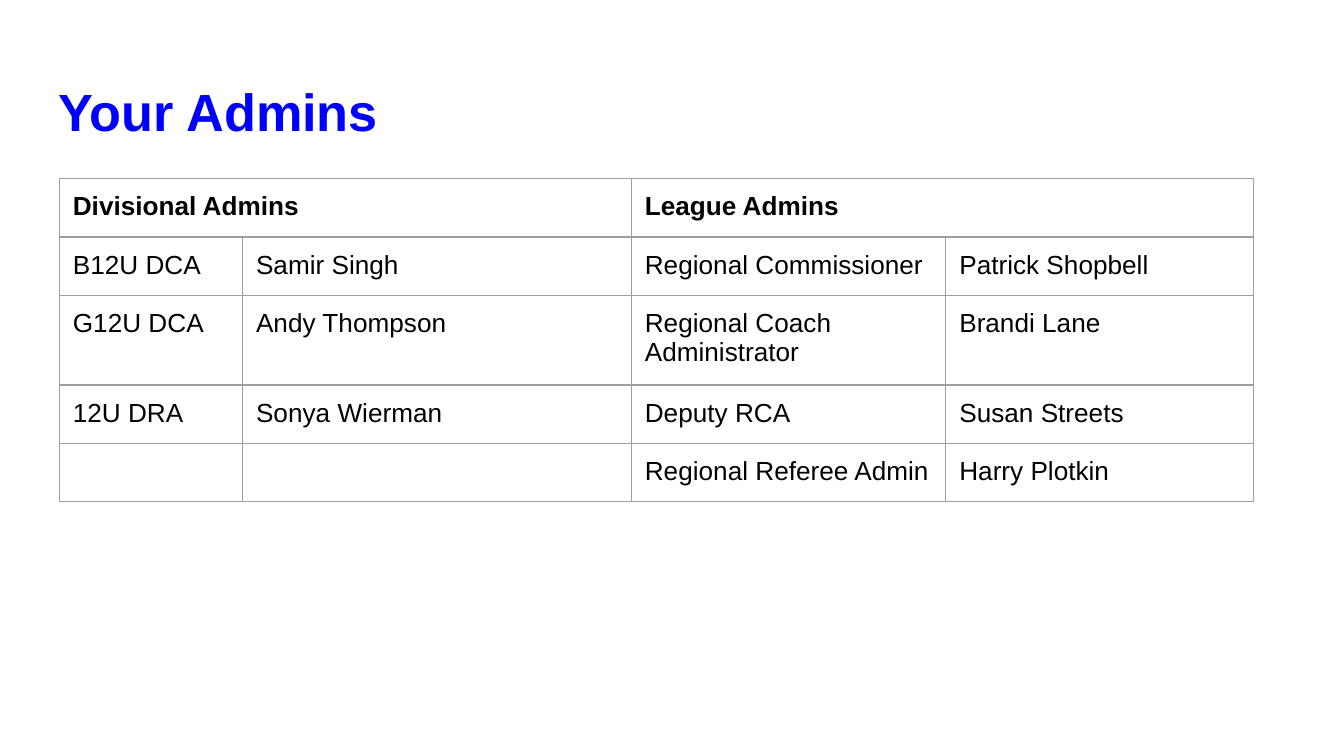
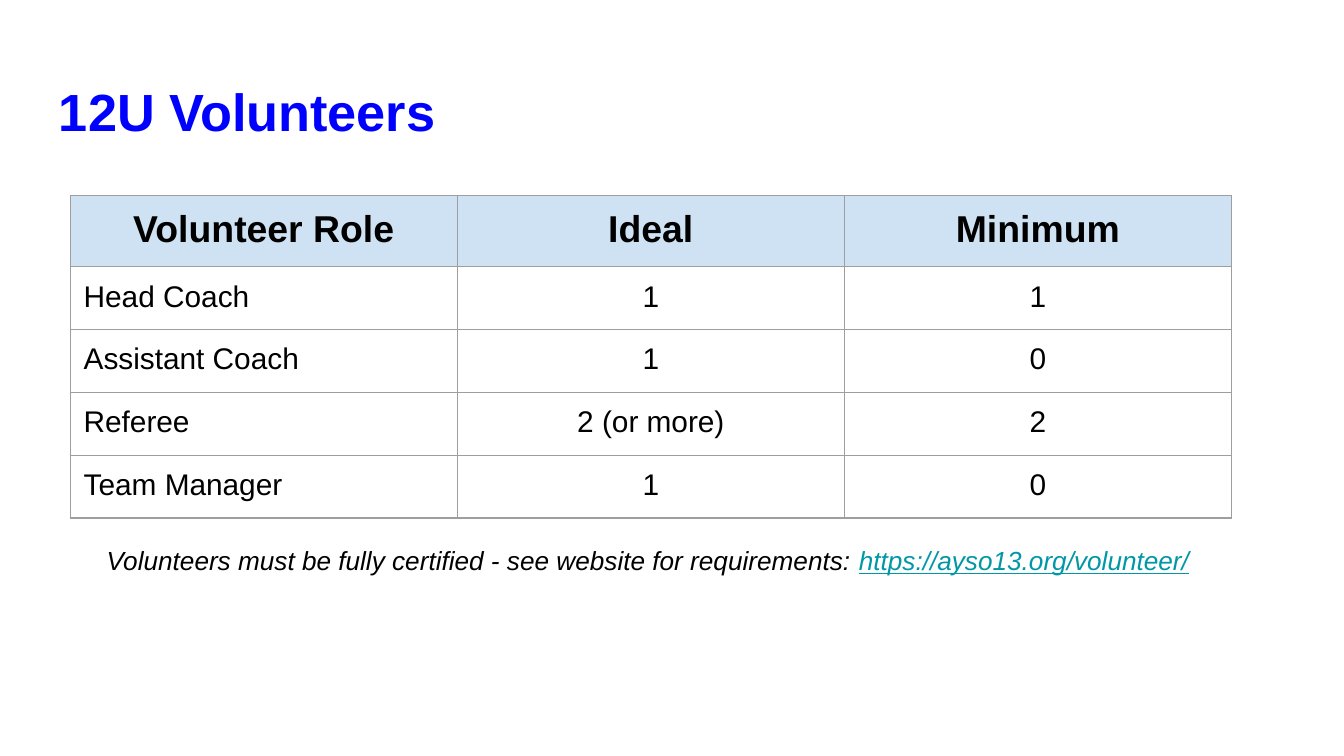
from dataclasses import dataclass

from lxml import etree
from pptx import Presentation, util as u
from pptx.dml.color import RGBColor
from pptx.enum import text
from pptx.oxml import ns

BLUE = RGBColor(0x00, 0x00, 0xFF)
BLACK = RGBColor(0x00, 0x00, 0x00)
TEAL = RGBColor(0x00, 0x97, 0xA7)
GRAY = RGBColor(0x9E, 0x9E, 0x9E)
PALE = RGBColor(0xCF, 0xE2, 0xF3)

WIDE = u.Inches(10)
TALL = WIDE * 9 // 16
COLS, ROWS = 100, 56.25
PAD = u.Inches(0.1)
RULE = u.Pt(0.75)
PLAIN = "{2D5ABB26-0587-4C30-8999-92F81FD0307C}"
LEFT, MID = text.PP_ALIGN.LEFT, text.PP_ALIGN.CENTER
PADS = {f"margin_{side}": PAD for side in ("left", "right", "top", "bottom")}
TIGHT = {"line_spacing": 1.0, "space_before": u.Pt(0), "space_after": u.Pt(0)}


@dataclass(frozen=True)
class Style:
    size: int
    bold: bool = False
    italic: bool = False
    underline: bool = False
    color: RGBColor = BLACK


@dataclass(frozen=True)
class Area:
    left: float
    top: float
    width: float
    height: float


@dataclass(frozen=True)
class Grid:
    left: float
    top: float
    widths: tuple[float, ...]
    heights: tuple[float, ...]
    cells: tuple[tuple[str, ...], ...]
    head: Style
    body: Style
    aligns: tuple
    center: bool = False
    fill: RGBColor | None = None
    merges: tuple[tuple[int, int], ...] = ()


HEAD = Style(28, bold=True, color=BLUE)
NOTE = Style(14, italic=True)
LINK = Style(14, italic=True, underline=True, color=TEAL)
TITLE = Area(3.41, 4.87, 93.18, 6.26)
FOOT = Area(5.3, 39.5, 86.4, 6.9)

ADMINS = Grid(
    4.42, 13.3, (13.63, 28.93, 23.4, 22.9), (4, 4.3, 4.4, 4, 4.3),
    (
        ("Divisional Admins", "", "League Admins", ""),
        ("B12U DCA", "Samir Singh", "Regional Commissioner", "Patrick Shopbell"),
        ("G12U DCA", "Andy Thompson", "Regional Coach Administrator", "Brandi Lane"),
        ("12U DRA", "Sonya Wierman", "Deputy RCA", "Susan Streets"),
        ("", "", "Regional Referee Admin", "Harry Plotkin"),
    ),
    Style(14, bold=True), Style(14), (LEFT,) * 4, merges=((0, 1), (2, 3)),
)
ROLES = Grid(
    5.23, 14.52, (28.8,) * 3, (4.2,) + (4.67,) * 4,
    (
        ("Volunteer Role", "Ideal", "Minimum"),
        ("Head Coach", "1", "1"),
        ("Assistant Coach", "1", "0"),
        ("Referee", "2 (or more)", "2"),
        ("Team Manager", "1", "0"),
    ),
    Style(20, bold=True), Style(16), (LEFT, MID, MID), center=True, fill=PALE,
)


def across(cols: float) -> int:
    return round(WIDE * cols / COLS)


def down(rows: float) -> int:
    return round(TALL * rows / ROWS)


def apply(item, values: dict) -> None:
    for name, value in values.items():
        setattr(item, name, value)


def write(para, words: str, style: Style) -> None:
    if not words:
        para._p.get_or_add_endParaRPr().set("sz", str(style.size * 100))
        return
    run = para.add_run()
    run.text = words
    apply(run.font, {
        "name": "Arial", "size": u.Pt(style.size), "bold": style.bold,
        "italic": style.italic, "underline": style.underline,
    })
    run.font.color.rgb = style.color


def add_text(slide, area: Area, parts: list[tuple[str, Style]], align=LEFT) -> None:
    box = slide.shapes.add_textbox(
        across(area.left), down(area.top), across(area.width), down(area.height))
    frame = box.text_frame
    apply(frame, {"word_wrap": True, **PADS})
    para = frame.paragraphs[0]
    para.alignment = align
    for words, style in parts:
        write(para, words, style)


def frame_cell(cell) -> None:
    props = cell._tc.get_or_add_tcPr()
    for side in ("L", "R", "T", "B"):
        line = etree.SubElement(
            props, ns.qn(f"a:ln{side}"), w=str(RULE), cap="flat", cmpd="sng")
        solid = etree.SubElement(line, ns.qn("a:solidFill"))
        etree.SubElement(solid, ns.qn("a:srgbClr"), val=str(GRAY))
        etree.SubElement(line, ns.qn("a:prstDash"), val="solid")


def add_grid(slide, grid: Grid) -> None:
    table = slide.shapes.add_table(
        len(grid.heights), len(grid.widths), across(grid.left), down(grid.top),
        across(sum(grid.widths)), down(sum(grid.heights))).table
    apply(table, {"first_row": False, "horz_banding": False})
    table._tbl.tblPr[0].text = PLAIN
    for col, width in zip(table.columns, grid.widths):
        col.width = across(width)
    for row, height in zip(table.rows, grid.heights):
        row.height = down(height)
    for r, line in enumerate(grid.cells):
        for c, words in enumerate(line):
            cell = table.cell(r, c)
            apply(cell, {**PADS, "vertical_anchor": text.MSO_ANCHOR.TOP})
            frame_cell(cell)
            if r == 0 and grid.fill is not None:
                cell.fill.solid()
                cell.fill.fore_color.rgb = grid.fill
            else:
                cell.fill.background()
            para = cell.text_frame.paragraphs[0]
            align = MID if r == 0 and grid.center else grid.aligns[c]
            apply(para, {**TIGHT, "alignment": align})
            write(para, words, grid.body if r else grid.head)
    for first, last in grid.merges:
        table.cell(0, first).merge(table.cell(0, last))


def add_slide(deck, title: str, grid: Grid):
    slide = deck.slides.add_slide(deck.slide_layouts[6])
    add_text(slide, TITLE, [(title, HEAD)])
    add_grid(slide, grid)
    return slide


def main() -> None:
    deck = Presentation()
    apply(deck, {"slide_width": WIDE, "slide_height": TALL})
    add_slide(deck, "Your Admins", ADMINS)
    slide = add_slide(deck, "12U Volunteers", ROLES)
    add_text(slide, FOOT, [
        ("Volunteers must be fully certified - see website for requirements: ", NOTE),
        ("https://ayso13.org/volunteer/", LINK),
        (" ", NOTE),
    ], MID)
    deck.save("out.pptx")


if __name__ == "__main__":
    main()
